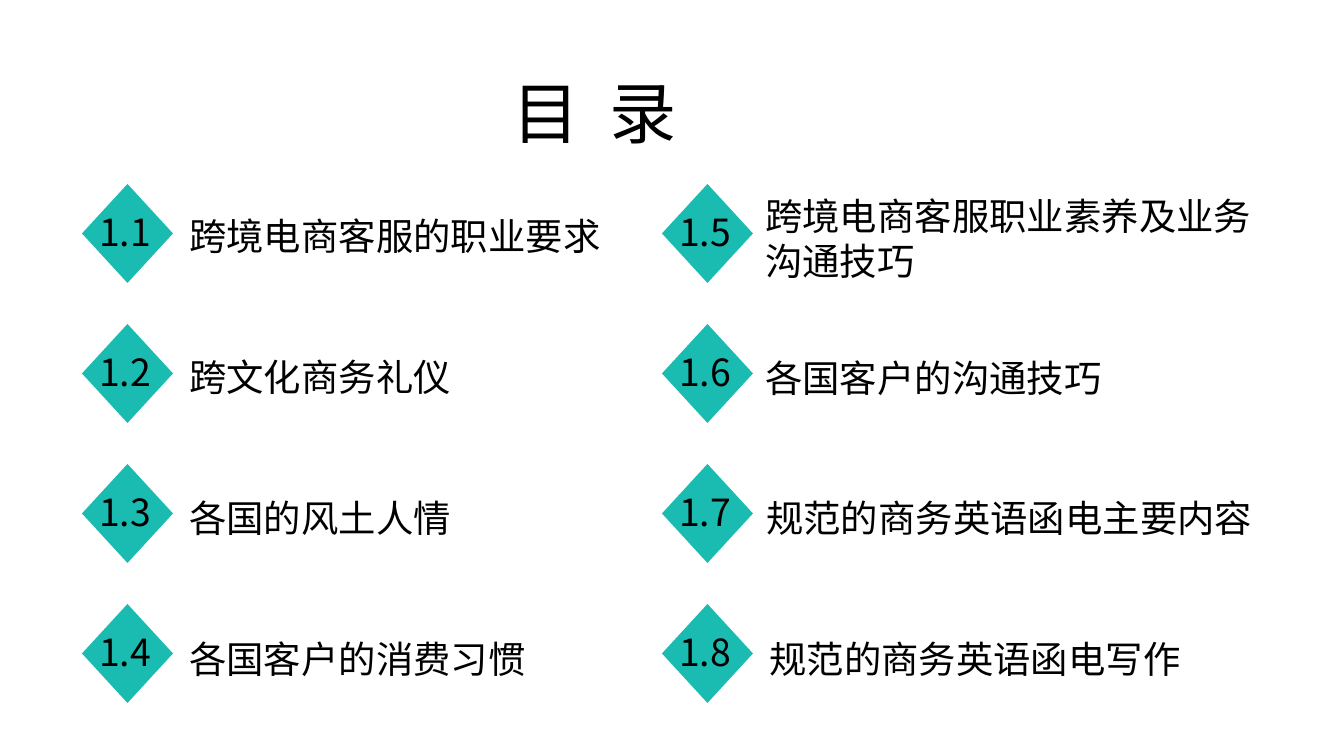
from dataclasses import dataclass

from pptx import Presentation
from pptx.dml.color import RGBColor
from pptx.enum.shapes import MSO_SHAPE as Shape
from pptx.oxml.ns import qn
from pptx.util import Emu, Pt

TITLE = "目 录"
# Each column: diamond left, label left, label width, entries.
# An entry is number, text, lines, and the label's nudge right and down.
COLUMNS = [
    (82, 176, 468, [
        ("1.1", "跨境电商客服的职业要求", 1, 0, 0),
        ("1.2", "跨文化商务礼仪", 1, 0, 0),
        ("1.3", "各国的风土人情", 1, 0, 0),
        ("1.4", "各国客户的消费习惯", 1, 0, 0),
    ]),
    (662, 752, 517, [
        ("1.5", "跨境电商客服职业素养及业务沟通技巧", 2, 0, 2),
        ("1.6", "各国客户的沟通技巧", 1, 0, 1),
        ("1.7", "规范的商务英语函电主要内容", 1, 1, 0),
        ("1.8", "规范的商务英语函电写作", 1, 4, 0),
    ]),
]


@dataclass(frozen=True)
class Theme:
    font: str = "Noto Sans CJK SC"
    ink: str = "000000"
    teal: str = "1ABBB1"
    title: int = 36
    body: int = 20


THEME = Theme()
SCALE = 914400 / 134.4
WIDE, HIGH = 1344, 756
TOP, PITCH = 184, 140
GEM_W, GEM_H = 91, 99
LABEL_TOP, LABEL_PITCH = 207, 141
BOX_H, LINE_H = 59, 45


def px(*nums):
    return [Emu(round(n * SCALE)) for n in nums]


def add_text(slide, text, at, size=THEME.body, color=THEME.ink, gap=0):
    """Add a text box; gap is letter spacing in points."""
    frame = slide.shapes.add_textbox(*px(*at)).text_frame
    frame.word_wrap = True
    run = frame.paragraphs[0].add_run()
    run.text = text
    font = run.font
    font.size, font.name = Pt(size), THEME.font
    font.color.rgb = RGBColor.from_string(color)
    props = run._r.get_or_add_rPr()
    east = props.makeelement(qn("a:ea"), {"typeface": THEME.font})
    props.find(qn("a:latin")).addnext(east)
    if gap:
        props.set("spc", str(gap * 100))


def add_gem(slide, left, top):
    gem = slide.shapes.add_shape(Shape.DIAMOND, *px(left, top, GEM_W, GEM_H))
    gem.shadow.inherit = False
    gem.fill.solid()
    gem.fill.fore_color.rgb = RGBColor.from_string(THEME.teal)
    gem.line.fill.background()


def main():
    deck = Presentation()
    deck.slide_width, deck.slide_height = px(WIDE, HIGH)
    slide = deck.slides.add_slide(deck.slide_layouts[6])
    add_text(slide, TITLE, (499, 65, 276, 95), size=THEME.title, gap=4)
    for left, label, width, items in COLUMNS:
        for row, (num, text, lines, right, down) in enumerate(items):
            top = TOP + row * PITCH
            add_gem(slide, left, top)
            add_text(slide, num, (left + 4, top + 19, 85, BOX_H))
            extra = (lines - 1) * LINE_H
            mid = LABEL_TOP + row * LABEL_PITCH - extra // 2 + down
            at = (label + right, mid, width, BOX_H + extra)
            add_text(slide, text, at)
    deck.save("out.pptx")


if __name__ == "__main__":
    main()
